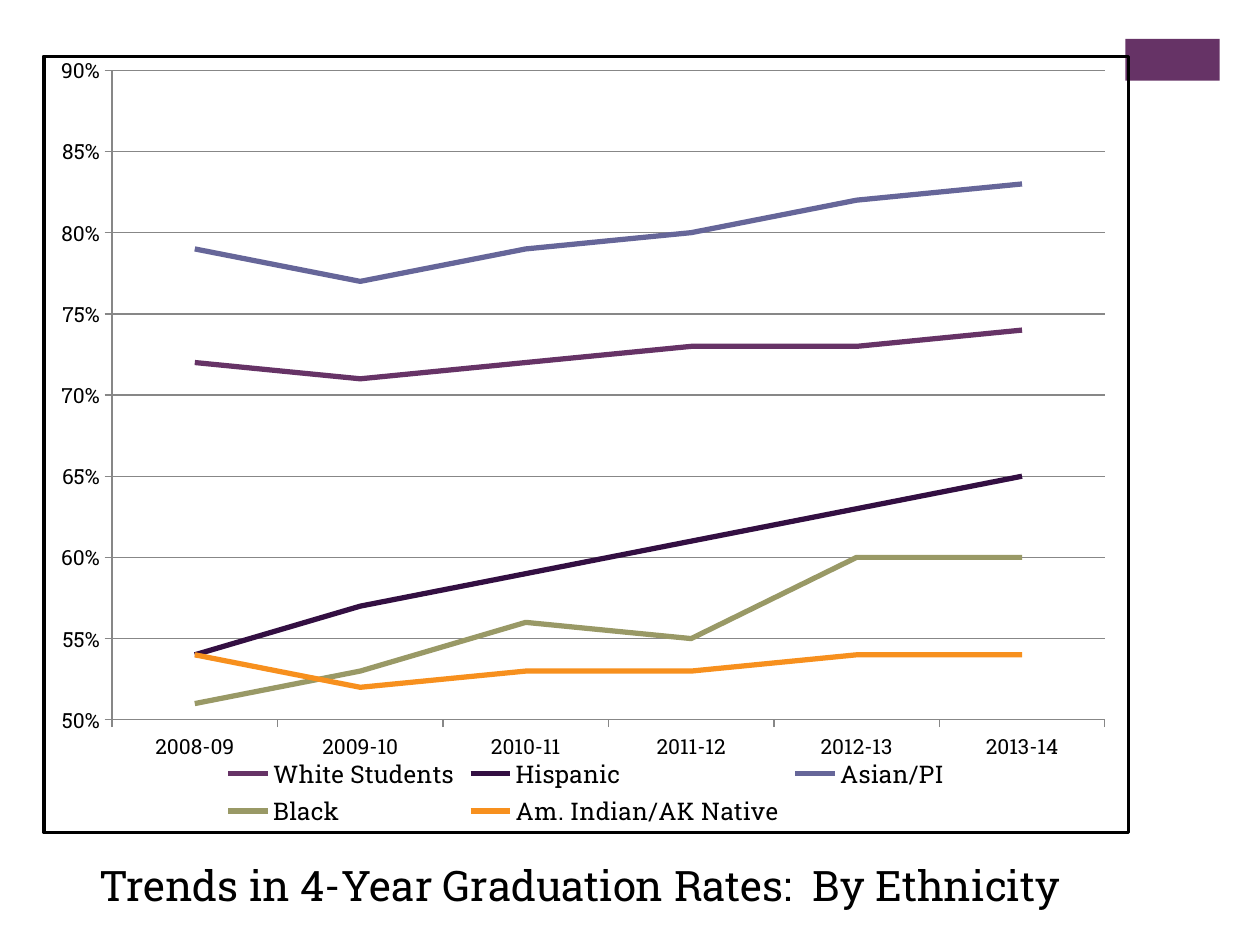
from pptx import Presentation
from pptx import util as u
from pptx.chart import data as cd
from pptx.dml import color as col
from pptx.enum import chart as ce
from pptx.enum import shapes, text
from pptx.oxml import parse_xml
from pptx.oxml import ns

HUES = {
    "black": "000000",
    "grid": "878787",
    "plum": "663366",
    "night": "330F42",
    "slate": "666699",
    "olive": "999966",
    "orange": "F7901E",
}
YEARS = ["2008-09", "2009-10", "2010-11", "2011-12", "2012-13", "2013-14"]
RATES = [
    ("White Students", "plum", [0.72, 0.71, 0.72, 0.73, 0.73, 0.74]),
    ("Hispanic", "night", [0.54, 0.57, 0.59, 0.61, 0.63, 0.65]),
    ("Asian/PI", "slate", [0.79, 0.77, 0.79, 0.80, 0.82, 0.83]),
    ("Black", "olive", [0.51, 0.53, 0.56, 0.55, 0.60, 0.60]),
    ("Am. Indian/AK Native", "orange", [0.54, 0.52, 0.53, 0.53, 0.54, 0.54]),
]
PLOT = {"x": 0.063, "y": 0.018, "w": 0.915, "h": 0.837}


class Deck:
    face = "Roboto Slab"

    def __init__(self, wide, high):
        self.file = Presentation()
        self.file.slide_width = u.Pt(wide)
        self.file.slide_height = u.Pt(high)
        self.slide = self.file.slides.add_slide(self.file.slide_layouts[6])

    def hue(self, name):
        return col.RGBColor.from_string(HUES[name])

    def style(self, font, size, hue="black"):
        font.name = self.face
        font.size = u.Pt(size)
        font.bold = False
        font.color.rgb = self.hue(hue)

    def stroke(self, line, hue, width):
        line.color.rgb = self.hue(hue)
        line.width = u.Pt(width)

    def block(self, box, hue):
        shape = self.slide.shapes.add_shape(
            shapes.MSO_SHAPE.RECTANGLE, *map(u.Pt, box))
        shape.shadow.inherit = False
        shape.fill.solid()
        shape.fill.fore_color.rgb = self.hue(hue)
        shape.line.fill.background()

    def label(self, box, words, size):
        frame = self.slide.shapes.add_textbox(*map(u.Pt, box)).text_frame
        frame.word_wrap = True
        frame.auto_size = text.MSO_AUTO_SIZE.SHAPE_TO_FIT_TEXT
        frame.text = words
        self.style(frame.paragraphs[0].runs[0].font, size)

    def graph(self, box, cats, rows, plot):
        data = cd.CategoryChartData(number_format="0%")
        data.categories = cats
        for name, _, vals in rows:
            data.add_series(name, vals)
        chart = self.slide.shapes.add_chart(
            ce.XL_CHART_TYPE.LINE, *map(u.Pt, box), data).chart
        self.style(chart.font, 10)
        chart.has_title = False
        chart.has_legend = True
        chart.legend.position = ce.XL_LEGEND_POSITION.BOTTOM
        chart.legend.include_in_layout = False
        self.style(chart.legend.font, 14)
        chart.plots[0].vary_by_categories = False
        for line, (_, hue, _) in zip(chart.plots[0].series, rows):
            line.smooth = False
            line.marker.style = ce.XL_MARKER_STYLE.NONE
            self.stroke(line.format.line, hue, 3)
        for axis in (chart.category_axis, chart.value_axis):
            axis.major_tick_mark = ce.XL_TICK_MARK.OUTSIDE
            axis.minor_tick_mark = ce.XL_TICK_MARK.NONE
            self.style(axis.tick_labels.font, 12)
            self.stroke(axis.format.line, "grid", 0.75)
        axis = chart.value_axis
        axis.minimum_scale, axis.maximum_scale = 0.5, 0.9
        axis.major_unit = 0.05
        axis.tick_labels.number_format = "0%"
        axis.tick_labels.number_format_is_linked = False
        axis.has_major_gridlines = True
        self.stroke(axis.major_gridlines.format.line, "grid", 0.75)
        self.place(chart, plot)
        self.frame(chart, "black", 2)

    def place(self, chart, plot):
        area = chart.element.find(".//" + ns.qn("c:plotArea"))
        for old in area.findall(ns.qn("c:layout")):
            area.remove(old)
        modes = "".join(f'<c:{k}Mode val="edge"/>' for k in "xy")
        sizes = "".join(f'<c:{k} val="{v}"/>' for k, v in plot.items())
        area.insert(0, parse_xml(
            f'<c:layout {ns.nsdecls("c")}><c:manualLayout>'
            f'<c:layoutTarget val="inner"/>{modes}{sizes}'
            '</c:manualLayout></c:layout>'))

    def frame(self, chart, hue, width):
        chart.element.find(ns.qn("c:chart")).addnext(parse_xml(
            f'<c:spPr {ns.nsdecls("c", "a")}><a:noFill/>'
            f'<a:ln w="{u.Pt(width)}"><a:solidFill>'
            f'<a:srgbClr val="{HUES[hue]}"/></a:solidFill></a:ln></c:spPr>'))


def main():
    deck = Deck(720, 540)
    deck.block((643, 22.3, 54, 23.8), "plum")
    deck.graph((24, 31.2, 622, 445.5), YEARS, RATES, PLOT)
    deck.label((49.7, 487.5, 595.5, 36),
               "Trends in 4-Year Graduation Rates:  By Ethnicity", 24)
    deck.file.save("out.pptx")


if __name__ == "__main__":
    main()
